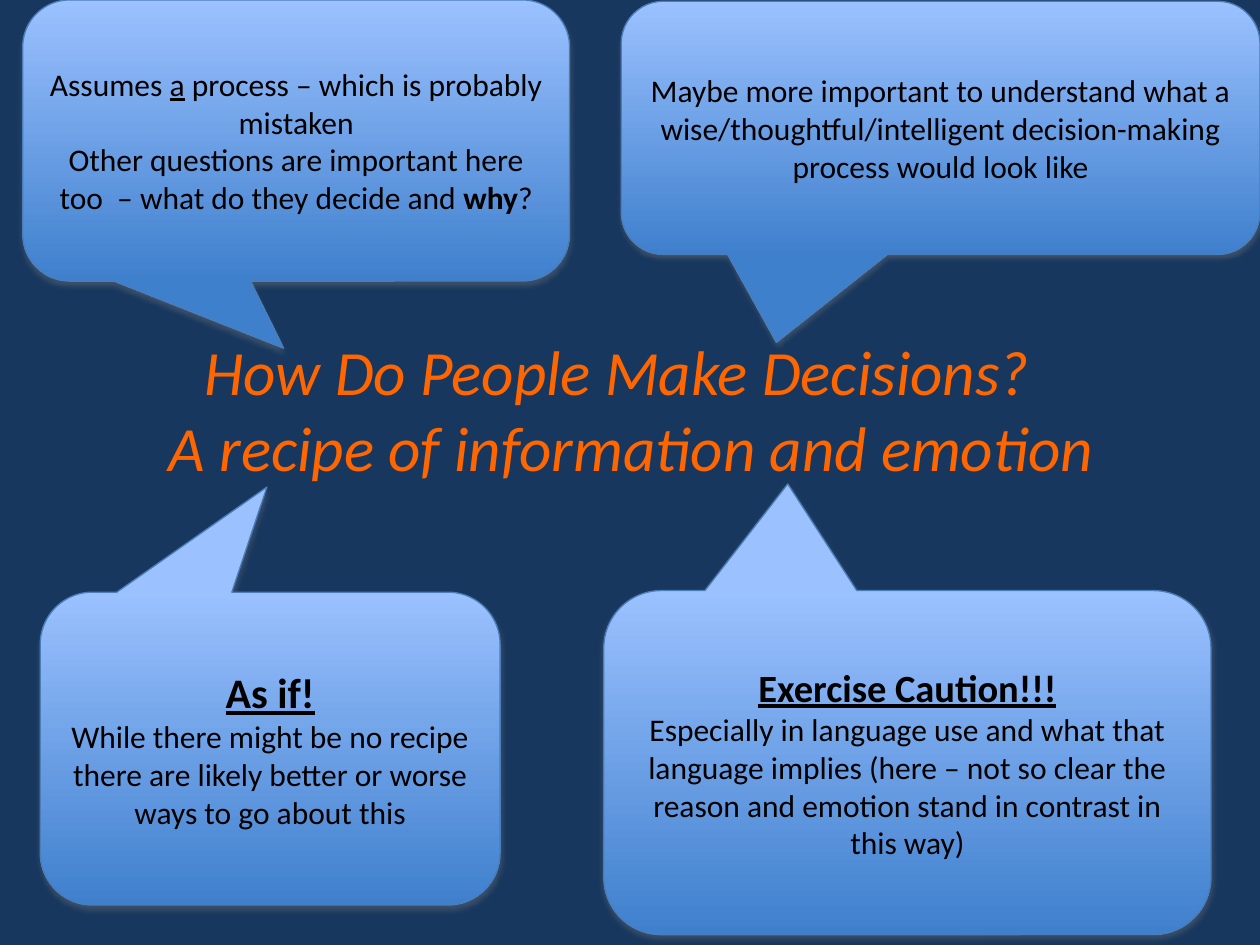
from lxml.etree import SubElement as Sub
from pptx import Presentation
from pptx.dml.color import RGBColor as RGB
from pptx.enum.shapes import MSO_SHAPE as Shape
from pptx.enum.text import MSO_ANCHOR as Anchor, MSO_AUTO_SIZE as Fit, PP_ALIGN as Align
from pptx.oxml.ns import qn
from pptx.util import Pt

NAVY = RGB(0x17, 0x37, 0x5E)
ORANGE = RGB(0xFF, 0x66, 0x00)
BLACK = RGB(0, 0, 0)
LIGHT = RGB(0x9B, 0xC1, 0xFF)
BLUE = RGB(0x3F, 0x80, 0xCD)
EDGE = RGB(0x4A, 0x7E, 0xBB)
GREY = RGB(0x80, 0x80, 0x80)


def put(para, text, size=18, color=BLACK, bold=False, italic=False, line=False):
    """Add one run of text in the given format."""
    run = para.add_run()
    run.text = text
    font = run.font
    font.name, font.size, font.color.rgb = "Calibri", Pt(size), color
    font.bold, font.italic, font.underline = bold, italic, line


class Deck:
    def __init__(self, width, height):
        self.prs = Presentation()
        self.prs.slide_width, self.prs.slide_height = Pt(width), Pt(height)
        self.slide = self.prs.slides.add_slide(self.prs.slide_layouts[6])
        fill = self.slide.background.fill
        fill.solid()
        fill.fore_color.rgb = NAVY

    def prose(self, frame, paras, **base):
        """Each paragraph is a list of (text, format) runs."""
        frame.word_wrap = True
        for i, runs in enumerate(paras):
            para = frame.add_paragraph() if i else frame.paragraphs[0]
            para.alignment = Align.CENTER
            for text, style in runs:
                put(para, text, **{**base, **style})

    def title(self, box, lines):
        frame = self.slide.shapes.add_textbox(*map(Pt, box)).text_frame
        self.prose(frame, [[(line, {})] for line in lines],
                   size=36, color=ORANGE, italic=True)
        frame.auto_size = Fit.SHAPE_TO_FIT_TEXT

    def shade(self, shape):
        shape.shadow.inherit = False
        effects = shape._element.spPr.find(qn("a:effectLst"))
        outer = Sub(effects, qn("a:outerShdw"), blurRad=str(Pt(3.1)),
                    dist=str(Pt(1.8)), dir="5400000", rotWithShape="0")
        color = Sub(outer, qn("a:srgbClr"), val=str(GREY))
        Sub(color, qn("a:alpha"), val="35000")

    def callout(self, box, tip, paras):
        """Draw a speech bubble; tip is its offset from the centre."""
        shape = self.slide.shapes.add_shape(
            Shape.ROUNDED_RECTANGULAR_CALLOUT, *map(Pt, box))
        for i, value in enumerate((*tip, 0.167)):
            shape.adjustments[i] = value
        shape.fill.gradient()
        shape.fill.gradient_angle = 270
        for stop, color, place in zip(shape.fill.gradient_stops, (LIGHT, BLUE), (0, 1)):
            stop.color.rgb, stop.position = color, place
        shape.line.color.rgb, shape.line.width = EDGE, Pt(0.75)
        self.shade(shape)
        shape.text_frame.vertical_anchor = Anchor.MIDDLE
        self.prose(shape.text_frame, paras)


def main():
    deck = Deck(720, 540)

    # Central question
    deck.title((37.4, 186.5, 646.6, 94.3),
               ["How Do People Make Decisions?  ",
                "A recipe of information and emotion"])

    # Upper comments
    deck.callout((13, 0, 312.5, 160.6), (-0.023, 0.739), [
        [("Assumes ", {}), ("a", dict(line=True)),
         (" process – which is probably mistaken", {})],
        [("Other questions are important here too  – what do they decide and ", {}),
         ("why", dict(bold=True)), ("?", {})]])
    deck.callout((355, 0.7, 365, 144.7), (-0.257, 0.847), [
        [("Maybe more important to understand what a wise/thoughtful/intelligent "
          "decision-making process would look like", {})]])

    # Lower comments, each with a heading
    head = dict(bold=True, line=True)
    deck.callout((23, 338.4, 262.8, 178.8), (-0.007, -0.836), [
        [("As if!", dict(head, size=24))],
        [("While there might be no recipe there are likely better or worse "
          "ways to go about this", {})]])
    deck.callout((345, 337.5, 347, 196.6), (-0.197, -0.81), [
        [("Exercise Caution!!!", dict(head, size=22))],
        [("Especially in language use and what that language implies (here – not "
          "so clear the reason and emotion stand in contrast in this way)", {})]])

    deck.prs.save("out.pptx")


if __name__ == "__main__":
    main()
